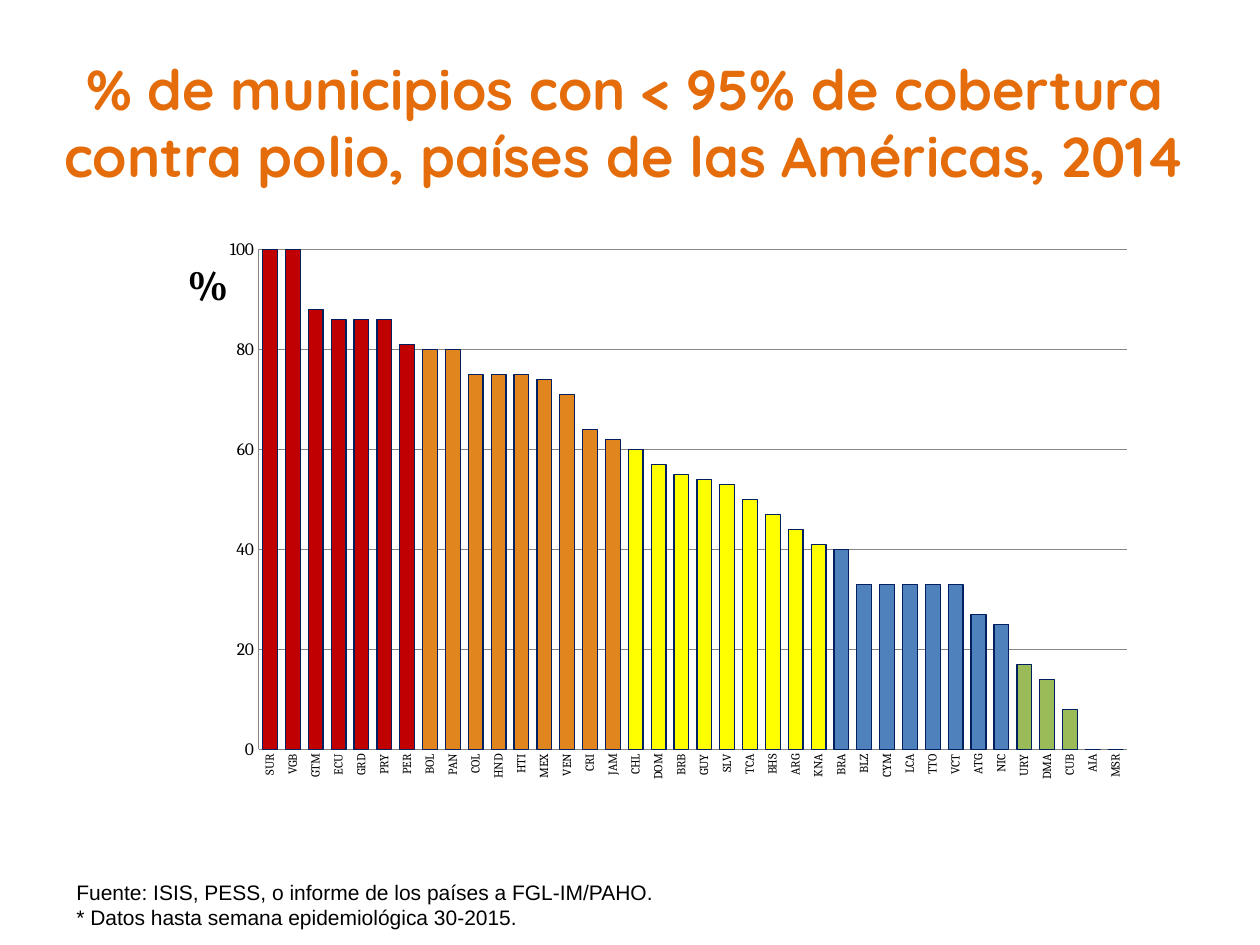
from lxml import etree
from pptx import Presentation
from pptx.chart.data import CategoryChartData
from pptx.dml.color import RGBColor
from pptx.enum.chart import XL_CHART_TYPE, XL_TICK_MARK
from pptx.enum.text import MSO_ANCHOR, PP_ALIGN
from pptx.oxml.ns import qn
from pptx.util import Pt

PX = 914400 / 126
COLUMN_STACKED = XL_CHART_TYPE.COLUMN_STACKED
NO_TICK = XL_TICK_MARK.NONE
LEFT, CENTER = PP_ALIGN.LEFT, PP_ALIGN.CENTER
TOP, BOTTOM = MSO_ANCHOR.TOP, MSO_ANCHOR.BOTTOM

BLACK, GRAY, NAVY = "000000", "868686", "002060"
RED, ORANGE, YELLOW, BLUE, GREEN = "C00000", "E1851F", "FFFF00", "4F81BD", "9BBB59"

# Countries and their percentages, one group per bar colour
GROUPS = [
    (RED, "SUR VGB GTM ECU GRD PRY PER", [100, 100, 88, 86, 86, 86, 81]),
    (ORANGE, "BOL PAN COL HND HTI MEX VEN CRI JAM",
     [80, 80, 75, 75, 75, 74, 71, 64, 62]),
    (YELLOW, "CHL DOM BRB GUY SLV TCA BHS ARG KNA",
     [60, 57, 55, 54, 53, 50, 47, 44, 41]),
    (BLUE, "BRA BLZ CYM LCA TTO VCT ATG NIC", [40, 33, 33, 33, 33, 33, 27, 25]),
    (GREEN, "URY DMA CUB", [17, 14, 8]),
    (BLUE, "AIA MSR", [0, 0]),
]


def px(length):
    return round(length * PX)


def color(hex_string):
    return RGBColor.from_string(hex_string)


def set_layout(parent, index, **settings):
    """Place a chart part by fractions of the chart area."""
    for old_layout in parent.findall(qn("c:layout")):
        parent.remove(old_layout)
    layout = etree.Element(qn("c:layout"))
    manual = etree.SubElement(layout, qn("c:manualLayout"))
    for name, value in settings.items():
        etree.SubElement(manual, qn(f"c:{name}")).set("val", str(value))
    parent.insert(index, layout)


class SlideBuilder:
    title_font, note_font, chart_font = "Quicksand", "Arial", "Cambria"

    def __init__(self, slide):
        self.slide = slide

    def style_font(self, font, name, size, hex_string, bold=False):
        font.name, font.size, font.bold = name, Pt(size), bold
        font.color.rgb = color(hex_string)

    def text(self, box, text, name, size, hex_string, bold=False,
             alignment=LEFT, anchor=TOP, wrap=True):
        shape = self.slide.shapes.add_textbox(*map(px, box))
        frame = shape.text_frame
        frame.text = text
        frame.word_wrap = wrap
        frame.vertical_anchor = anchor
        for paragraph in frame.paragraphs:
            paragraph.alignment = alignment
            for run in paragraph.runs:
                self.style_font(run.font, name, size, hex_string, bold)

    def bar_format(self, part, hex_string):
        part.format.fill.solid()
        part.format.fill.fore_color.rgb = color(hex_string)
        part.format.line.color.rgb = color(NAVY)
        part.format.line.width = Pt(0.75)

    def column_chart(self, box, groups):
        data = CategoryChartData()
        data.categories = [code for _, codes, _ in groups for code in codes.split()]
        data.add_series("Series 1", [value for _, _, values in groups for value in values])
        frame = self.slide.shapes.add_chart(COLUMN_STACKED, *map(px, box), data)
        chart = frame.chart
        chart.has_legend = chart.has_title = False
        self.style_font(chart.font, self.chart_font, 10, BLACK)
        set_layout(chart.plots[0]._element.getparent(), 0, layoutTarget="inner",
                   xMode="edge", yMode="edge", x=0.1, y=0.03, w=0.88, h=0.82)

        # Bars
        plot = chart.plots[0]
        plot.gap_width, plot.overlap, plot.vary_by_categories = 55, 100, False
        series = plot.series[0]
        series.invert_if_negative = False
        self.bar_format(series, BLUE)
        colors = [fill for fill, _, values in groups for _ in values]
        for index, fill in enumerate(colors):
            if fill != BLUE:
                self.bar_format(series.points[index], fill)

        self.axes(chart.category_axis, chart.value_axis)

    def axes(self, category_axis, value_axis):
        for axis in (category_axis, value_axis):
            axis.major_tick_mark = axis.minor_tick_mark = NO_TICK
            axis.format.line.color.rgb = color(GRAY)
        self.style_font(category_axis.tick_labels.font, self.chart_font, 7, BLACK)
        category_axis._element.find(qn("c:txPr")).find(qn("a:bodyPr")).set("rot", "-5400000")

        value_axis.minimum_scale, value_axis.maximum_scale = 0, 100
        value_axis.major_unit = 20
        value_axis.has_major_gridlines = True
        value_axis.major_gridlines.format.line.color.rgb = color(GRAY)
        value_axis.tick_labels.number_format = "0"
        value_axis.tick_labels.number_format_is_linked = False

        # Upright percent sign beside the top of the value axis
        title = value_axis.axis_title
        title.text_frame.text = "%"
        self.style_font(title.text_frame.paragraphs[0].runs[0].font,
                        self.chart_font, 24, BLACK, True)
        body = title._element.find(f".//{qn('a:bodyPr')}")
        body.set("rot", "0")
        body.set("vert", "horz")
        set_layout(title._element, 1, xMode="edge", yMode="edge", x=0.02, y=0.03)


def main():
    presentation = Presentation()
    presentation.slide_width, presentation.slide_height = px(1260), px(945)
    builder = SlideBuilder(presentation.slides.add_slide(presentation.slide_layouts[6]))

    # Title
    builder.text((32, 38, 1187, 157),
                 "% de municipios con < 95% de cobertura contra polio, "
                 "países de las Américas, 2014",
                 builder.title_font, 32, "E46C0A", True, CENTER, BOTTOM)

    # Coverage chart
    builder.column_chart((160, 231, 987, 610), GROUPS)

    # Source note
    builder.text((64, 873, 620, 63),
                 "Fuente: ISIS, PESS, o informe de los países a FGL-IM/PAHO.\n"
                 "* Datos hasta semana epidemiológica 30-2015.",
                 builder.note_font, 12, BLACK, wrap=False)

    presentation.save("out.pptx")


if __name__ == "__main__":
    main()
